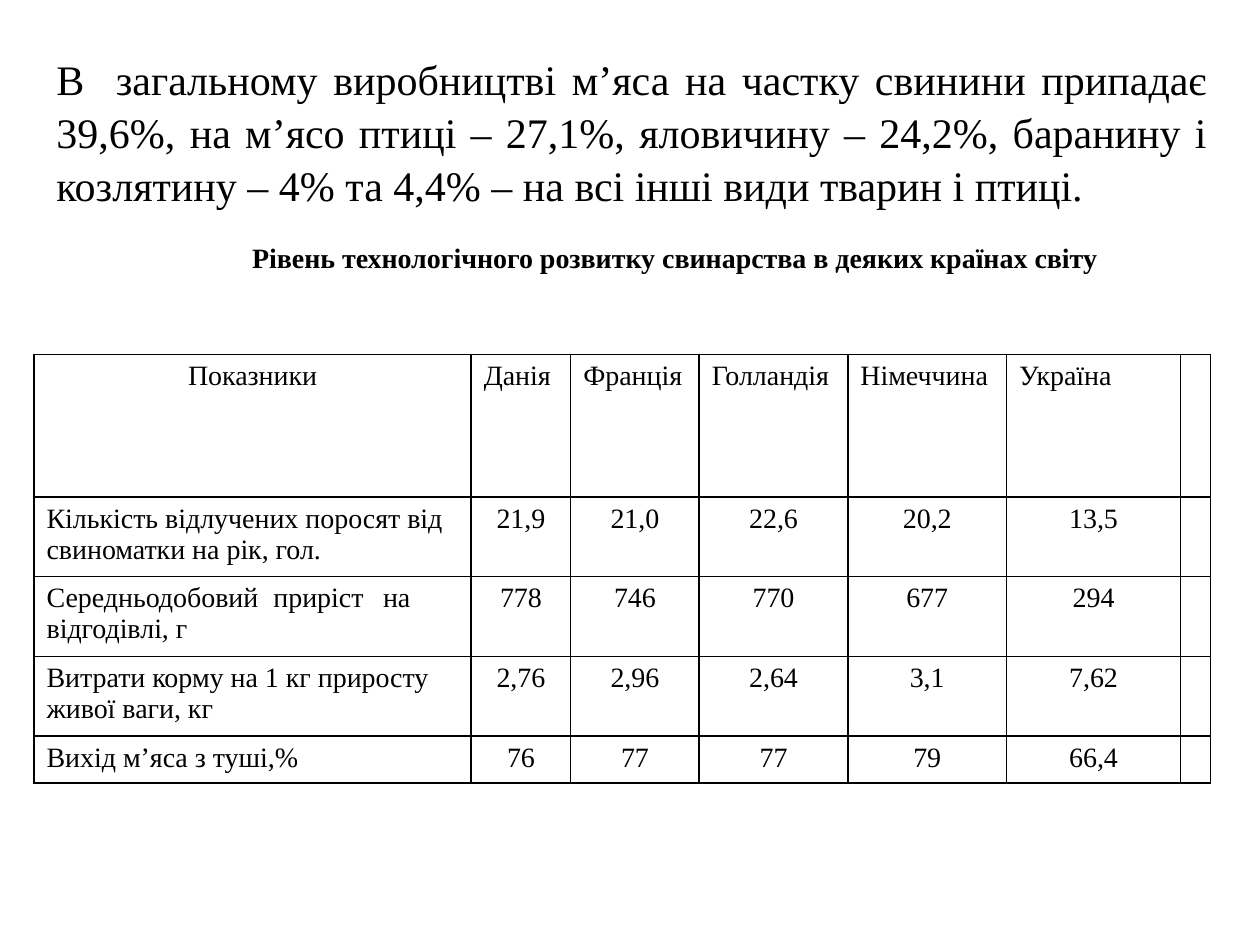
from lxml import etree
from pptx import Presentation
from pptx.dml.color import RGBColor
from pptx.enum.text import PP_ALIGN
from pptx.oxml.ns import qn
from pptx.util import Inches, Pt

LEFT, CENTER, JUSTIFY = PP_ALIGN.LEFT, PP_ALIGN.CENTER, PP_ALIGN.JUSTIFY
COLORS = {"text": "000000", "border": "000000"}
FONT = "Times New Roman"
WIDTH, HEIGHT = Inches(10), Inches(7.5)
COL_WIDTHS = [3.47, 0.79, 1.02, 1.18, 1.26, 1.38, 0.23]
ROW_HEIGHTS = [1.13, 0.63, 0.63, 0.63, 0.37]
TAB_STOPS = [1.8, 2.67]

INTRO = ("В  загальному виробництві м’яса на частку свинини припадає 39,6%, "
         "на м’ясо птиці – 27,1%, яловичину – 24,2%, баранину і козлятину – 4% "
         "та 4,4% – на всі інші види тварин і птиці.")
CAPTION = "Рівень технологічного розвитку свинарства в деяких країнах світу"
ROWS = [
    ["Показники", "Данія", "Франція", "Голландія", "Німеччина", "Україна", ""],
    ["Кількість відлучених поросят від свиноматки на рік, гол.",
     "21,9", "21,0", "22,6", "20,2", "13,5", ""],
    ["Середньодобовий\tприріст\tна\nвідгодівлі, г",
     "778", "746", "770", "677", "294", ""],
    ["Витрати корму на 1 кг приросту\nживої ваги, кг",
     "2,76", "2,96", "2,64", "3,1", "7,62", ""],
    ["Вихід м’яса з туші,%", "76", "77", "77", "79", "66,4", ""],
]


def format_text(tf, size, align, bold=False):
    """Apply font, colour and alignment to all paragraphs of a frame."""
    for p in tf.paragraphs:
        p.alignment = align
        for r in p.runs:
            r.font.name = FONT
            r.font.size = Pt(size)
            r.font.bold = bold
            r.font.color.rgb = RGBColor.from_string(COLORS["text"])
        if not p.runs:
            etree.SubElement(p._p, qn("a:endParaRPr"), sz=str(size * 100))


def add_text(s, text, box, size, align, bold=False):
    """Add a wrapped text box placed by shares of the slide's size."""
    x, y, w, h = box
    sp = s.shapes.add_textbox(int(x * WIDTH), int(y * HEIGHT),
                              int(w * WIDTH), int(h * HEIGHT))
    tf = sp.text_frame
    tf.word_wrap = True
    tf.text = text
    format_text(tf, size, align, bold)
    return tf


def add_tab_stops(p):
    """Give a paragraph the left tab stops of the indicator column."""
    tabs = etree.SubElement(p._p.get_or_add_pPr(), qn("a:tabLst"))
    for stop in TAB_STOPS:
        etree.SubElement(tabs, qn("a:tab"), pos=str(Inches(stop)), algn="l")


def set_borders(cell):
    """Draw a thin solid line on all four sides of a cell."""
    tc_pr = cell._tc.get_or_add_tcPr()
    for i, side in enumerate(("lnL", "lnR", "lnT", "lnB")):
        ln = etree.Element(qn(f"a:{side}"), w=str(Pt(1)))
        fill = etree.SubElement(ln, qn("a:solidFill"))
        etree.SubElement(fill, qn("a:srgbClr"), val=COLORS["border"])
        tc_pr.insert(i, ln)


def fill_cell(cell, text, align):
    """Write and style one table cell."""
    cell.text = text
    format_text(cell.text_frame, 16, align)
    if "\t" in text:
        for p in cell.text_frame.paragraphs:
            add_tab_stops(p)
    cell.fill.background()
    set_borders(cell)


def add_indicator_table(s):
    """Add the table of indicators by country."""
    table = s.shapes.add_table(
        len(ROWS), len(COL_WIDTHS), int(0.027 * WIDTH), int(0.375 * HEIGHT),
        Inches(sum(COL_WIDTHS)), Inches(sum(ROW_HEIGHTS))).table
    table.first_row = table.horz_banding = False
    for col, width in zip(table.columns, COL_WIDTHS):
        col.width = Inches(width)
    for row, height in zip(table.rows, ROW_HEIGHTS):
        row.height = Inches(height)
    for i, texts in enumerate(ROWS):
        for j, text in enumerate(texts):
            align = CENTER if (i == 0) == (j == 0) else LEFT
            fill_cell(table.cell(i, j), text, align)


def main():
    """Build and save the slide."""
    prs = Presentation()
    prs.slide_width, prs.slide_height = WIDTH, HEIGHT
    s = prs.slides.add_slide(prs.slide_layouts[6])
    tf = add_text(s, INTRO, (0.035, 0.048, 0.933, 0.227), 24, JUSTIFY)
    tf.paragraphs[0].line_spacing = 1.05
    tf = add_text(s, CAPTION, (0.02, 0.237, 0.967, 0.087), 16, CENTER, True)
    tf.margin_left, tf.margin_top = Inches(0.74), Inches(0.13)
    add_indicator_table(s)
    prs.save("out.pptx")


if __name__ == "__main__":
    main()
